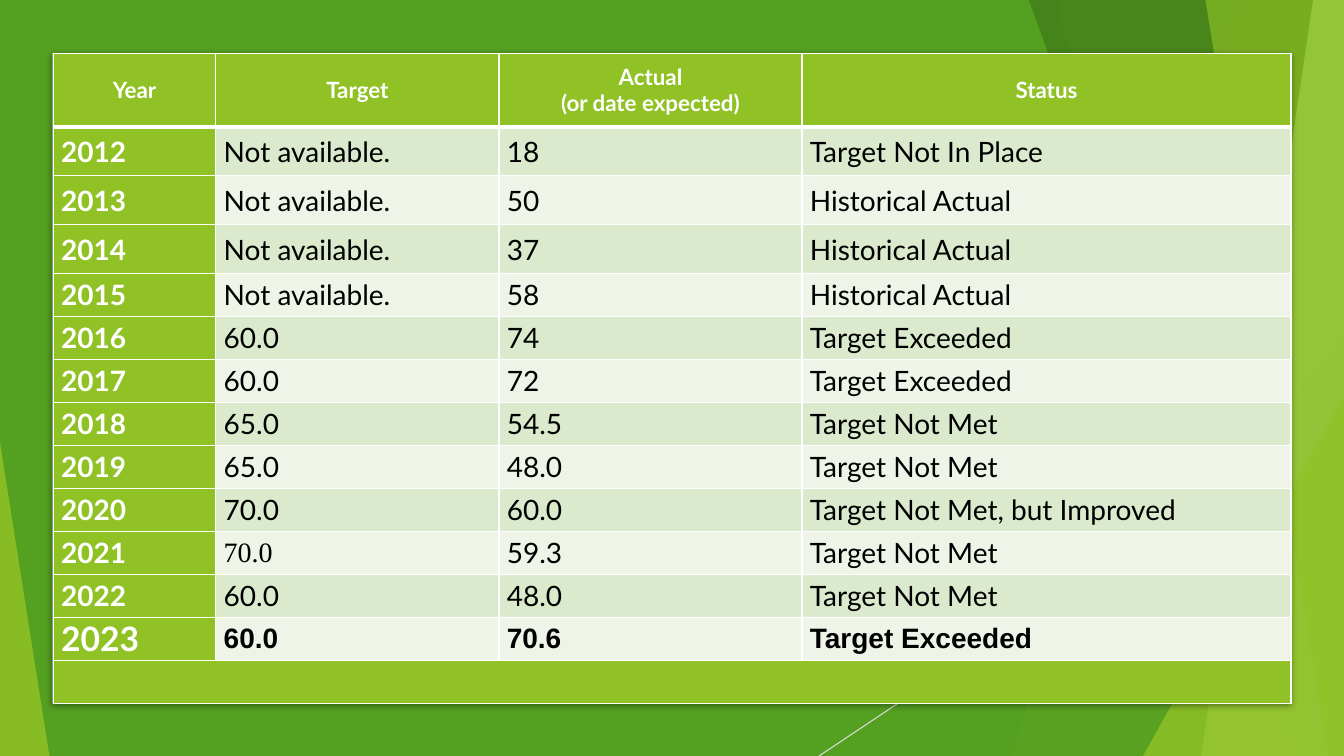
"""Builds the slide with the yearly target and actual table."""
from dataclasses import dataclass

from lxml.etree import SubElement
from pptx import Presentation
from pptx.dml.color import RGBColor
from pptx.enum.shapes import MSO_CONNECTOR, MSO_SHAPE
from pptx.enum.text import MSO_ANCHOR, PP_ALIGN
from pptx.oxml.ns import qn
from pptx.util import Pt


@dataclass
class Theme:
    green: str = "54A021"
    dark: str = "3F7819"
    lime: str = "90C226"
    pale: str = "C0E474"
    white: str = "FFFFFF"
    black: str = "000000"
    rule: str = "D9D9D9"
    bands: tuple = ("DBE9CD", "EEF4E8")
    font: str = "Lato"
    head_size: float = 16
    body_size: float = 20
    large_size: float = 24


class SlideBuilder:
    def __init__(self, slide, theme):
        self.slide, self.theme = slide, theme

    def paint(self, sp, color, alpha=100):
        sp.shadow.inherit = False
        sp.line.fill.background()
        sp.fill.solid()
        sp.fill.fore_color.rgb = RGBColor.from_string(color)
        if alpha < 100:
            clr = sp.fill._xPr.find(qn("a:solidFill"))[0]
            SubElement(clr, qn("a:alpha"), val=str(alpha * 1000))

    def shape(self, kind, box, color, alpha=100, adj=None):
        sp = self.slide.shapes.add_shape(kind, *map(Pt, box))
        if adj is not None:
            sp.adjustments[0] = adj
        self.paint(sp, color, alpha)
        return sp

    def facet(self, top, bottom, color, alpha):
        fb = self.slide.shapes.build_freeform(top, 0, scale=Pt(1))
        fb.add_line_segments([(960, 0), (960, 540), (bottom, 540)])
        self.paint(fb.convert_to_shape(), color, alpha)

    def line(self, start, end, color, width):
        cn = self.slide.shapes.add_connector(
            MSO_CONNECTOR.STRAIGHT, *map(Pt, start + end))
        cn.line.color.rgb = RGBColor.from_string(color)
        cn.line.width = Pt(width)
        SubElement(cn._element.spPr, qn("a:effectLst"))

    def shadow(self, sp, blur, dist, alpha):
        effects = sp._element.spPr.find(qn("a:effectLst"))
        outer = SubElement(effects, qn("a:outerShdw"), blurRad=str(Pt(blur)),
                           dist=str(Pt(dist)), dir="5400000", rotWithShape="0")
        clr = SubElement(outer, qn("a:srgbClr"), val=self.theme.black)
        SubElement(clr, qn("a:alpha"), val=str(alpha * 1000))

    def table(self, left, top, widths, heights):
        frame = self.slide.shapes.add_table(
            len(heights), len(widths), Pt(left), Pt(top),
            Pt(sum(widths)), Pt(sum(heights)))
        tbl = frame.table
        tbl.first_row = tbl.horz_banding = False
        for col, width in zip(tbl.columns, widths):
            col.width = Pt(width)
        for row, height in zip(tbl.rows, heights):
            row.height = Pt(height)
        return tbl

    def cell(self, cell, text, fill, color, size, bold=False, font=None,
             align=PP_ALIGN.LEFT, top=1, bottom=1):
        cell.margin_left = cell.margin_right = Pt(5.6)
        cell.margin_top = cell.margin_bottom = Pt(0.7)
        cell.vertical_anchor = MSO_ANCHOR.MIDDLE
        p = cell.text_frame.paragraphs[0]
        p.text = text
        p.alignment = align
        p.font.name = font or self.theme.font
        p.font.size = Pt(size)
        p.font.bold = bold
        p.font.color.rgb = RGBColor.from_string(color)
        tc_pr = cell._tc.get_or_add_tcPr()
        for side, width in (("L", 1), ("R", 1), ("T", top), ("B", bottom)):
            ln = SubElement(tc_pr, qn(f"a:ln{side}"), w=str(Pt(width)))
            solid = SubElement(ln, qn("a:solidFill"))
            SubElement(solid, qn("a:srgbClr"), val=self.theme.white)
        cell.fill.solid()
        cell.fill.fore_color.rgb = RGBColor.from_string(fill)


HEADERS = ["Year", "Target", "Actual\n(or date expected)", "Status"]
RESULTS = [
    ("2012", "Not available.", "18", "Target Not In Place"),
    ("2013", "Not available.", "50", "Historical Actual"),
    ("2014", "Not available.", "37", "Historical Actual"),
    ("2015", "Not available.", "58", "Historical Actual"),
    ("2016", "60.0", "74", "Target Exceeded"),
    ("2017", "60.0", "72", "Target Exceeded"),
    ("2018", "65.0", "54.5", "Target Not Met"),
    ("2019", "65.0", "48.0", "Target Not Met"),
    ("2020", "70.0", "60.0", "Target Not Met, but Improved"),
    ("2021", "70.0", "59.3", "Target Not Met"),
    ("2022", "60.0", "48.0", "Target Not Met"),
    ("2023", "60.0", "70.6", "Target Exceeded"),
]


def draw_backdrop(b):
    t = b.theme
    b.shape(MSO_SHAPE.RECTANGLE, (0, 0, 960, 540), t.green)
    b.line((960, 290), (585, 540), t.rule, 0.75)
    b.facet(884, 723, t.lime, 30)
    b.facet(756, 852, t.lime, 20)
    triangle = MSO_SHAPE.ISOSCELES_TRIANGLE
    b.shape(triangle, (703.5, 240, 256.5, 300), t.green, 72, 1)
    b.facet(735, 929.5, t.dark, 70)
    b.facet(938, 858, t.pale, 70)
    b.facet(861, 949, t.lime, 65)
    b.shape(triangle, (816.5, 283, 143.5, 257), t.lime, 80, 1)
    b.shape(triangle, (0, 316, 35.3, 224), t.lime, 85, 0)
    panel = b.shape(MSO_SHAPE.RECTANGLE, (37.5, 38, 885, 464.5), t.white)
    b.shadow(panel, 5, 1.4, 43)


def draw_results(b):
    t = b.theme
    heights = [52.5] + [35] * 3 + [30.7] * 10
    tbl = b.table(38, 38, [116.2, 202.2, 216.5, 349.3], heights)
    for c, text in enumerate(HEADERS):
        b.cell(tbl.cell(0, c), text, t.lime, t.white, t.head_size, True,
               align=PP_ALIGN.CENTER, bottom=3)
    for r, (year, *values) in enumerate(RESULTS, 1):
        top = 3 if r == 1 else 1
        latest = r == len(RESULTS)
        year_size = t.large_size if latest else t.body_size
        b.cell(tbl.cell(r, 0), year, t.lime, t.white, year_size, True, top=top)
        for c, text in enumerate(values, 1):
            font = "Arial" if latest else None
            if (year, c) == ("2021", 1):
                font = "Times New Roman"
            b.cell(tbl.cell(r, c), text, t.bands[(r - 1) % 2], t.black,
                   t.body_size, latest, font, top=top)
    last = len(heights) - 1
    tbl.cell(last, 0).merge(tbl.cell(last, 3))
    for c in range(4):
        b.cell(tbl.cell(last, c), "", t.lime, t.white, t.body_size)


def main():
    prs = Presentation()
    prs.slide_width, prs.slide_height = Pt(960), Pt(540)
    b = SlideBuilder(prs.slides.add_slide(prs.slide_layouts[6]), Theme())
    draw_backdrop(b)
    draw_results(b)
    prs.save("out.pptx")


if __name__ == "__main__":
    main()
